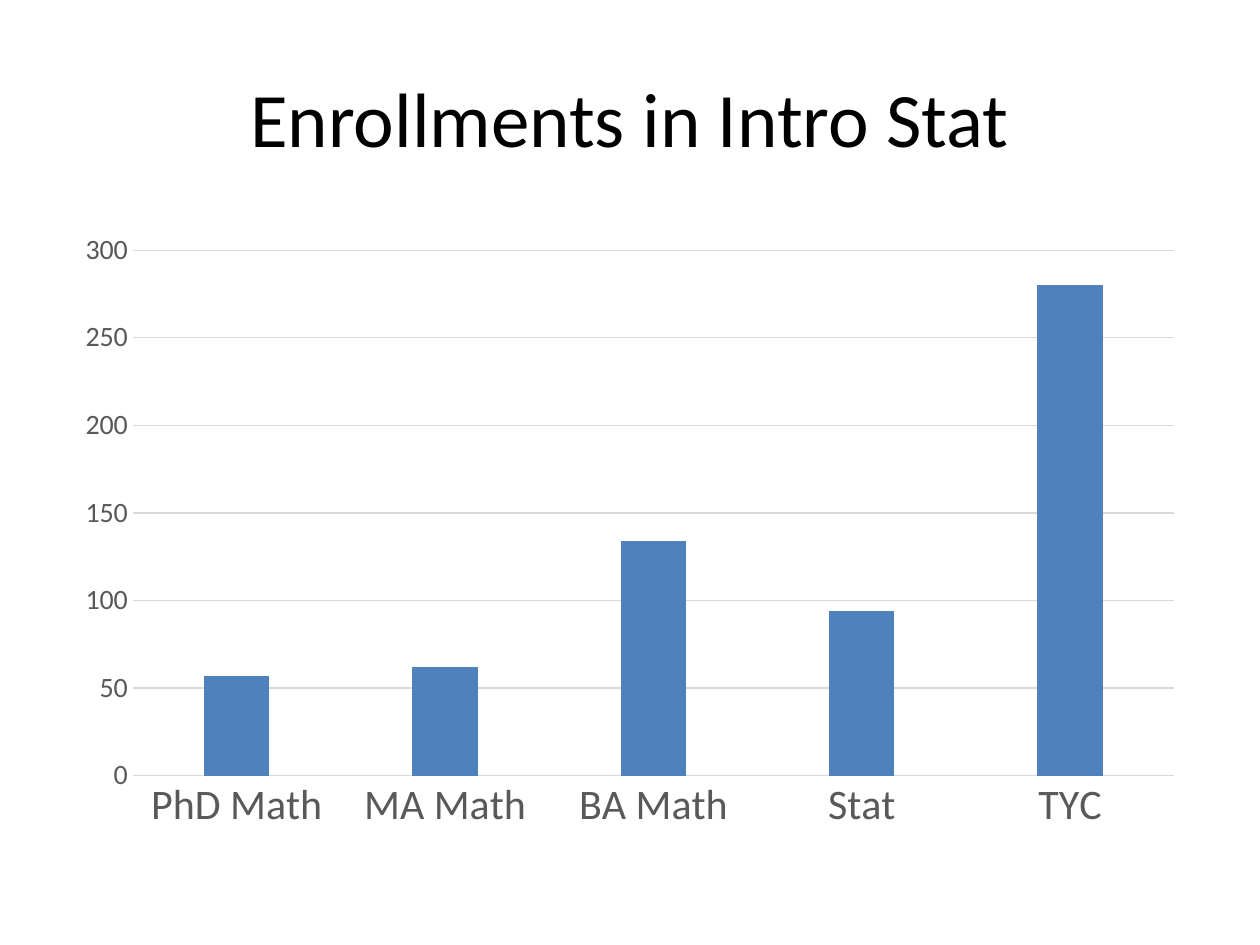
from pptx import Presentation
from pptx import util as u
from pptx.chart.data import CategoryChartData
from pptx.dml.color import RGBColor
from pptx.enum import chart as ch, text

COLOURS = {
    "background": "FFFFFF",
    "title": "000000",
    "label": "595959",
    "grid": "D9D9D9",
    "bar": "4F81BD",
}
ENROLLMENTS = {"PhD Math": 57, "MA Math": 62, "BA Math": 134, "Stat": 94, "TYC": 280}


class SlideWriter:
    def __init__(self, slide, font="Calibri"):
        self.slide = slide
        self.font = font

    def colour(self, name):
        return RGBColor.from_string(COLOURS[name])

    def style(self, font, size, colour):
        font.name = self.font
        font.size = u.Pt(size)
        font.color.rgb = self.colour(colour)

    def background(self):
        fill = self.slide.background.fill
        fill.solid()
        fill.fore_color.rgb = self.colour("background")

    def title(self, wording, left, top, width, height):
        frame = self.slide.shapes.add_textbox(left, top, width, height).text_frame
        frame.word_wrap = True
        frame.vertical_anchor = text.MSO_ANCHOR.MIDDLE
        heading = frame.paragraphs[0]
        heading.alignment = text.PP_ALIGN.CENTER
        run = heading.add_run()
        run.text = wording
        self.style(run.font, 44, "title")

    def axis(self, axis, label_size):
        axis.major_tick_mark = axis.minor_tick_mark = ch.XL_TICK_MARK.NONE
        self.style(axis.tick_labels.font, label_size, "label")

    def thin_line(self, line):
        line.color.rgb = self.colour("grid")
        line.width = u.Pt(0.75)

    def column_chart(self, counts, left, top, width, height):
        data = CategoryChartData(number_format="0")
        data.categories = list(counts)
        data.add_series("Series 1", list(counts.values()))
        chart = self.slide.shapes.add_chart(
            ch.XL_CHART_TYPE.COLUMN_CLUSTERED, left, top, width, height, data
        ).chart
        chart.has_title = False
        chart.has_legend = False
        self.style(chart.font, 10, "title")

        columns = chart.plots[0]
        columns.vary_by_categories = False
        columns.gap_width = 219
        columns.overlap = -27
        bars = columns.series[0].format.fill
        bars.solid()
        bars.fore_color.rgb = self.colour("bar")

        self.axis(chart.category_axis, 24)
        self.thin_line(chart.category_axis.format.line)

        counts_axis = chart.value_axis
        self.axis(counts_axis, 16)
        counts_axis.format.line.fill.background()
        counts_axis.tick_labels.number_format = "0"
        counts_axis.tick_labels.number_format_is_linked = False
        counts_axis.has_major_gridlines = True
        self.thin_line(counts_axis.major_gridlines.format.line)


def main():
    deck = Presentation()
    deck.slide_width = u.Cm(25.4)
    deck.slide_height = u.Cm(19.05)
    writer = SlideWriter(deck.slides.add_slide(deck.slide_layouts[6]))

    margin = u.Cm(1.27)
    content_width = deck.slide_width - 2 * margin
    writer.background()
    writer.title("Enrollments in Intro Stat", margin, u.Cm(0.76), content_width, u.Cm(3.18))
    writer.column_chart(ENROLLMENTS, margin, u.Cm(4.45), content_width, u.Cm(12.57))
    deck.save("out.pptx")


if __name__ == "__main__":
    main()
